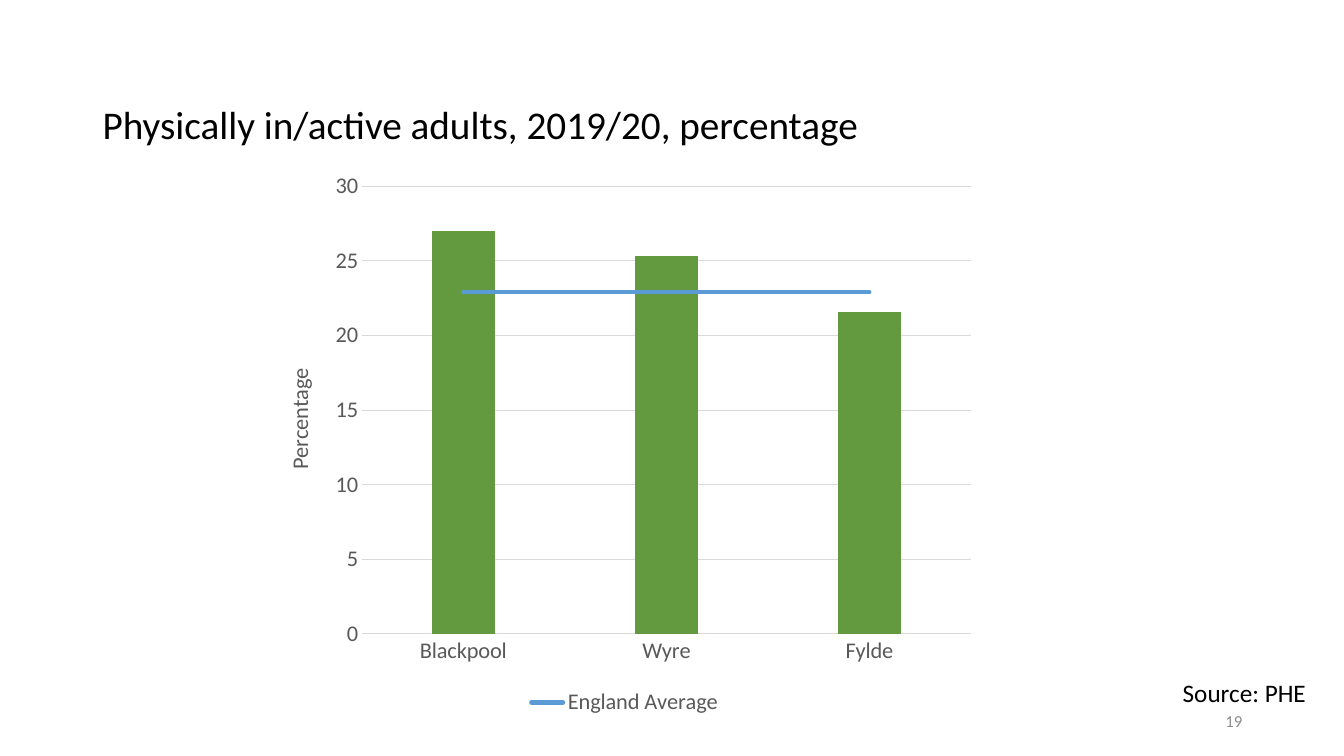
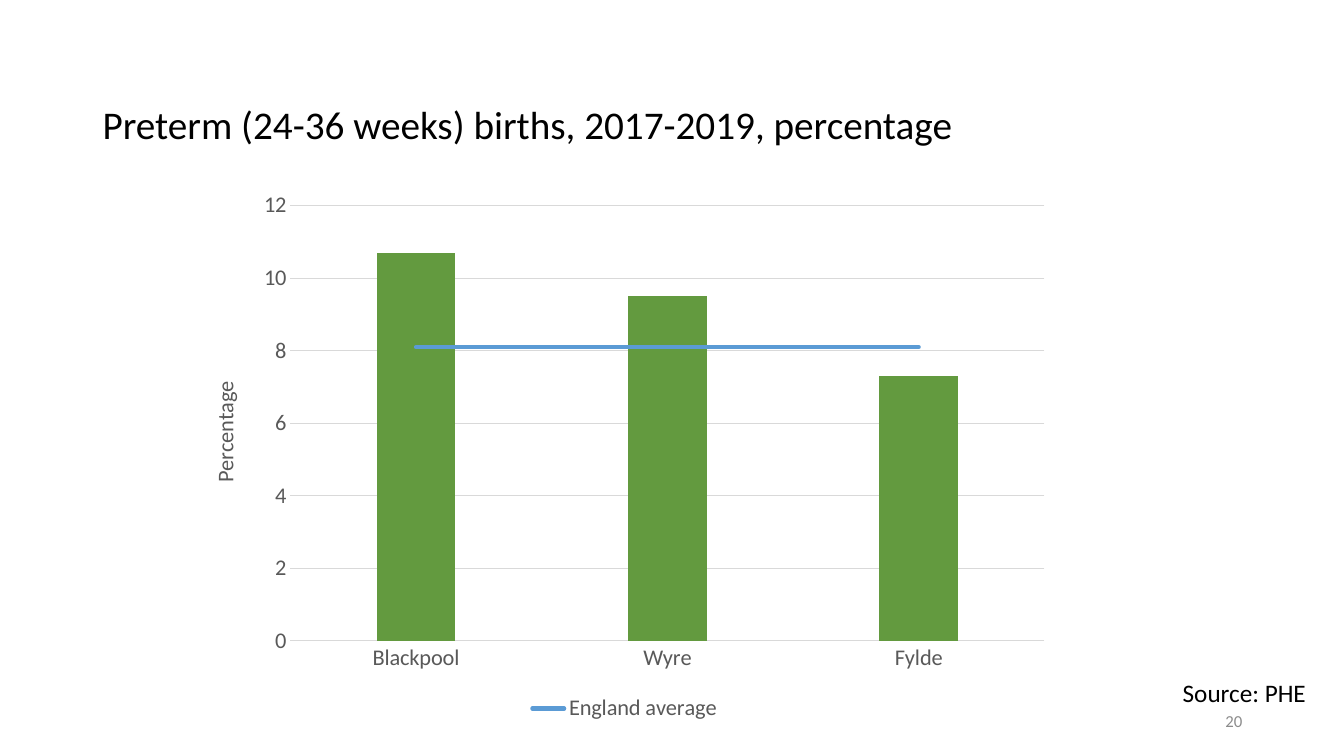
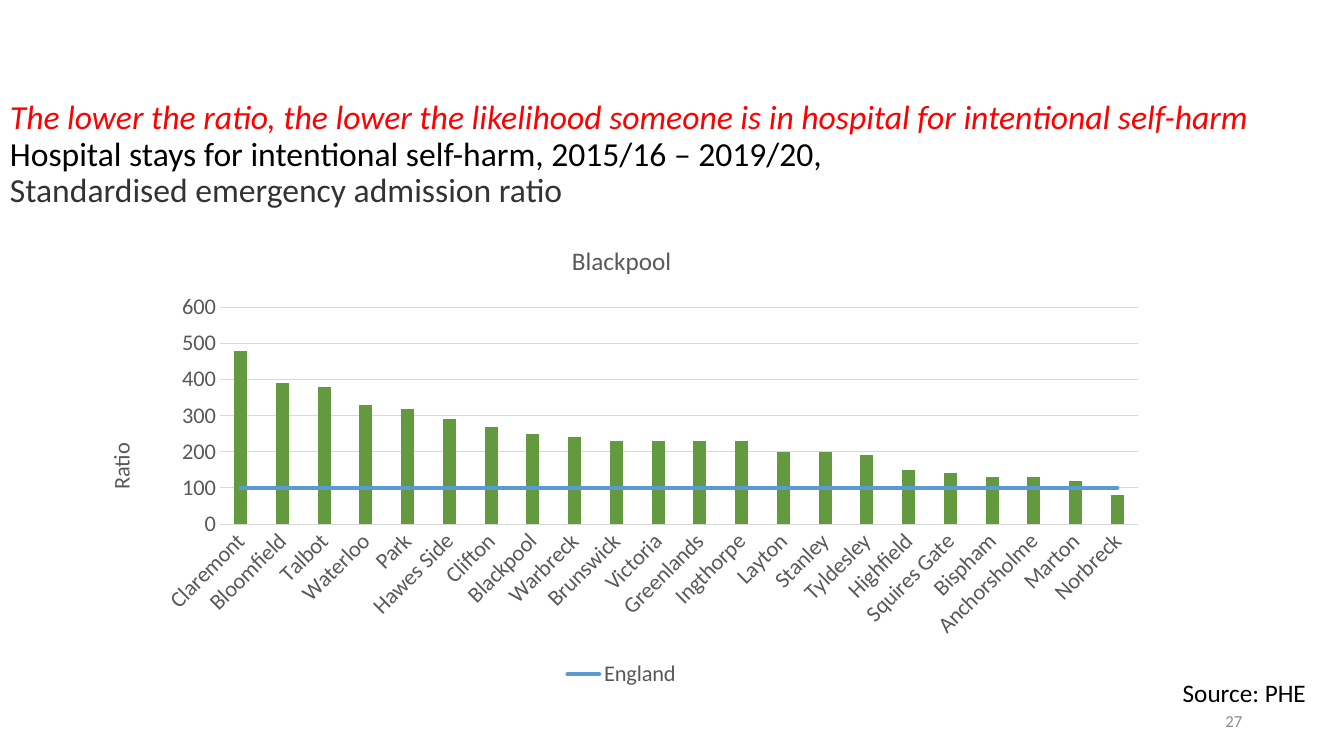
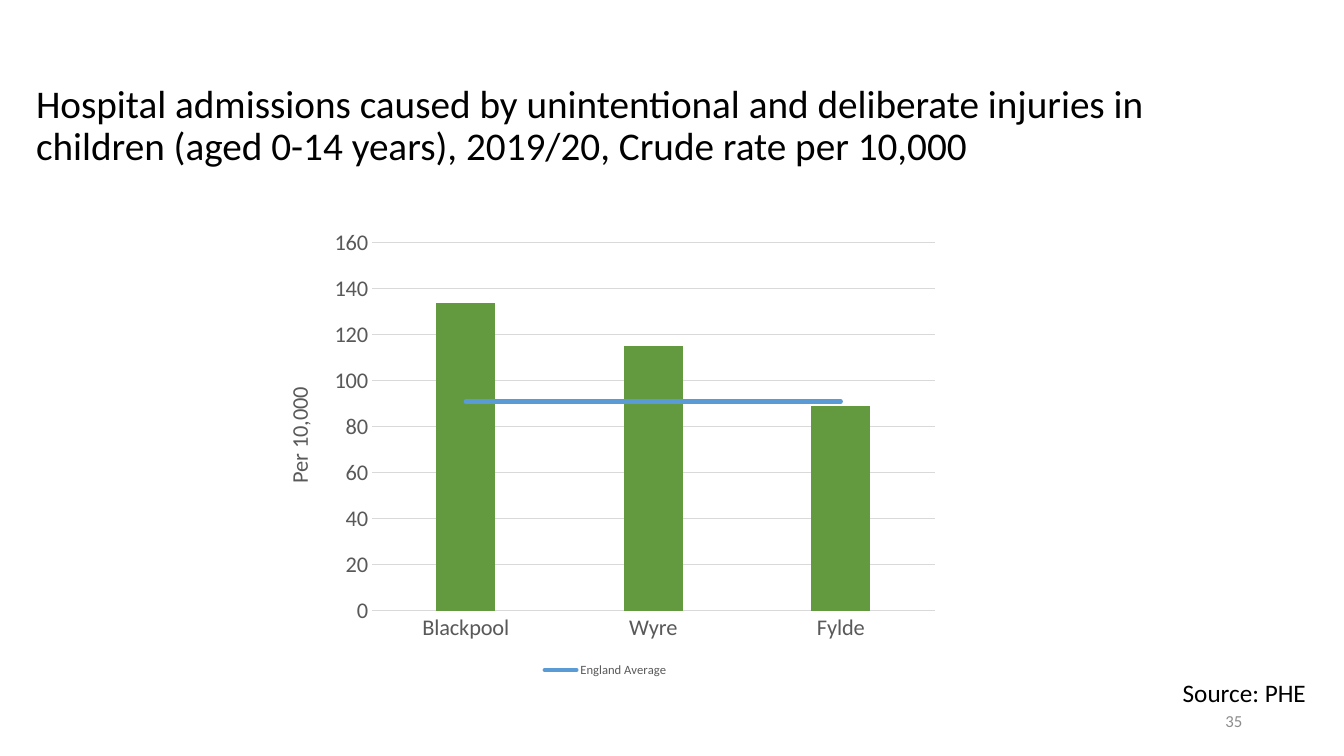
from dataclasses import dataclass

from pptx import Presentation
from pptx import util as u
from pptx.chart.chart import Chart
from pptx.chart.data import CategoryChartData
from pptx.dml.color import RGBColor
from pptx.enum import chart as charts
from pptx.enum import text
from pptx.oxml import parse_xml
from pptx.oxml.ns import nsdecls
from pptx.slide import Slide


@dataclass(frozen=True)
class Theme:
    font: str = "Calibri"
    black: str = "000000"
    red: str = "FF0000"
    charcoal: str = "333333"
    page_grey: str = "8C8C8C"
    label_grey: str = "595959"
    grid_grey: str = "D9D9D9"
    bar_green: str = "639A3F"
    average_blue: str = "5B9BD5"
    title_size: int = 28
    long_title_size: int = 24
    source_size: int = 18
    chart_title_size: int = 18
    label_size: int = 16
    page_size: int = 12
    small_legend_size: int = 9


THEME = Theme()


@dataclass(frozen=True)
class Area:
    """A rectangle in inches."""
    left: float
    top: float
    width: float
    height: float

    def lengths(self) -> tuple[u.Length, ...]:
        return tuple(u.Inches(n) for n in (self.left, self.top, self.width, self.height))


@dataclass(frozen=True)
class Line:
    words: str
    color: str = THEME.black
    size: int = THEME.title_size
    italic: bool = False


@dataclass(frozen=True)
class ChartPage:
    number: int
    title: tuple[Line, ...]
    title_area: Area
    chart_area: Area
    plot_area: Area
    axis_title: str
    values: dict[str, float]
    average_name: str
    average: float
    chart_title: str = ""
    legend_size: int = THEME.label_size
    label_angle: int = 0


TITLE_AREA = Area(0.92, 0.72, 11.5, 1.08)
NUMBER_AREA = Area(9.42, 6.95, 3, 0.4)
SOURCE_AREA = Area(11.16, 6.67, 1.89, 0.4)
DISTRICTS = ("Blackpool", "Wyre", "Fylde")
WARD_RATIOS = {
    "Claremont": 480, "Bloomfield": 390, "Talbot": 380, "Waterloo": 330,
    "Park": 320, "Hawes Side": 290, "Clifton": 270, "Blackpool": 250,
    "Warbreck": 240, "Brunswick": 230, "Victoria": 230, "Greenlands": 230,
    "Ingthorpe": 230, "Layton": 200, "Stanley": 200, "Tyldesley": 190,
    "Highfield": 150, "Squires Gate": 140, "Bispham": 130,
    "Anchorsholme": 130, "Marton": 120, "Norbreck": 80,
}

PAGES = (
    ChartPage(
        19, (Line("Physically in/active adults, 2019/20, percentage"),), TITLE_AREA,
        Area(2.61, 1.6, 7.17, 5.55), Area(3.59, 1.85, 6.04, 4.44),
        "Percentage", dict(zip(DISTRICTS, (27, 25.3, 21.6))), "England Average", 22.9,
    ),
    ChartPage(
        20, (Line("Preterm (24-36 weeks) births, 2017-2019, percentage"),), TITLE_AREA,
        Area(1.86, 1.8, 8.67, 5.41), Area(2.88, 2.04, 7.48, 4.32),
        "Percentage", dict(zip(DISTRICTS, (10.7, 9.5, 7.3))), "England average", 8.1,
    ),
    ChartPage(
        27,
        (
            Line("The lower the ratio, the lower the likelihood someone is in hospital "
                 "for intentional self-harm", THEME.red, THEME.long_title_size, True),
            Line("Hospital stays for intentional self-harm, 2015/16 – 2019/20,",
                 size=THEME.long_title_size),
            Line("Standardised emergency admission ratio", THEME.charcoal,
                 THEME.long_title_size),
        ),
        Area(0, 0.87, 12.77, 1.34),
        Area(0.83, 2.22, 10.67, 4.65), Area(2.18, 3.05, 9.11, 2.15),
        "Ratio", WARD_RATIOS, "England", 100,
        chart_title="Blackpool", label_angle=-45,
    ),
    ChartPage(
        35,
        (Line("Hospital admissions caused by unintentional and deliberate injuries in "
              "children (aged 0-14 years), 2019/20, Crude rate per 10,000"),),
        Area(0.26, 0.72, 12.16, 1.08),
        Area(2.6, 2.18, 6.81, 4.58), Area(3.69, 2.41, 5.58, 3.65),
        "Per 10,000", dict(zip(DISTRICTS, (134, 115, 89))), "England Average", 91,
        legend_size=THEME.small_legend_size,
    ),
)


def style_font(font, size: int, color: str, italic: bool = False) -> None:
    font.name = THEME.font
    font.size = u.Pt(size)
    font.bold = False
    font.italic = italic
    font.color.rgb = RGBColor.from_string(color)


def add_text(page: Slide, area: Area, lines: tuple[Line, ...],
             align=text.PP_ALIGN.LEFT, anchor=text.MSO_ANCHOR.MIDDLE,
             spacing: float = 1.0) -> None:
    """Add one paragraph whose lines are split by line breaks."""
    frame = page.shapes.add_textbox(*area.lengths()).text_frame
    frame.word_wrap = True
    frame.vertical_anchor = anchor
    para = frame.paragraphs[0]
    para.text = "\v".join(line.words for line in lines)
    para.alignment = align
    para.line_spacing = spacing
    for span, line in zip(para.runs, lines):
        style_font(span.font, line.size, line.color, line.italic)


def set_chart_text(frame, words: str, size: int) -> None:
    frame.text = words
    style_font(frame.paragraphs[0].runs[0].font, size, THEME.label_grey)


def turn_average_into_line(chart: Chart) -> None:
    """Move the second bar series to a line plot on the same axes."""
    bars = chart.element.xpath(".//c:barChart")[0]
    average = bars.xpath("c:ser")[1]
    for flag in average.xpath("c:invertIfNegative"):
        average.remove(flag)
    line_plot = parse_xml(
        f'<c:lineChart {nsdecls("c")}><c:grouping val="standard"/>'
        '<c:varyColors val="0"/><c:marker val="1"/></c:lineChart>')
    line_plot.insert(2, average)
    for axis in bars.xpath("c:axId"):
        line_plot.append(parse_xml(
            f'<c:axId {nsdecls("c")} val="{axis.get("val")}"/>'))
    bars.addnext(line_plot)

    series = chart.plots[1].series[0]
    series.smooth = False
    series.marker.style = charts.XL_MARKER_STYLE.NONE
    series.format.line.width = u.Pt(3)
    series.format.line.color.rgb = RGBColor.from_string(THEME.average_blue)
    line_plot.xpath(".//a:ln")[0].set("cap", "rnd")


def place_plot(chart: Chart, chart_area: Area, plot_area: Area) -> None:
    """Fix the inner plot rectangle as fractions of the chart."""
    fractions = {
        "x": (plot_area.left - chart_area.left) / chart_area.width,
        "y": (plot_area.top - chart_area.top) / chart_area.height,
        "w": plot_area.width / chart_area.width,
        "h": plot_area.height / chart_area.height,
    }
    sizes = "".join(f'<c:{key} val="{value:.4f}"/>' for key, value in fractions.items())
    plot = chart.element.xpath(".//c:plotArea")[0]
    for layout in plot.xpath("c:layout"):
        plot.remove(layout)
    plot.insert(0, parse_xml(
        f'<c:layout {nsdecls("c")}><c:manualLayout><c:layoutTarget val="inner"/>'
        f'<c:xMode val="edge"/><c:yMode val="edge"/>{sizes}</c:manualLayout></c:layout>'))


def style_axes(chart: Chart, data: ChartPage) -> None:
    grid_color = RGBColor.from_string(THEME.grid_grey)
    for axis in (chart.category_axis, chart.value_axis):
        axis.major_tick_mark = axis.minor_tick_mark = charts.XL_TICK_MARK.NONE
        style_font(axis.tick_labels.font, THEME.label_size, THEME.label_grey)
    values = chart.value_axis
    values.format.line.fill.background()
    values.tick_labels.number_format = "0"
    values.tick_labels.number_format_is_linked = False
    for line in (chart.category_axis.format.line, values.major_gridlines.format.line):
        line.width = u.Pt(0.75)
        line.color.rgb = grid_color
    set_chart_text(values.axis_title.text_frame, data.axis_title, THEME.label_size)
    chart.element.xpath(".//c:valAx/c:title//a:bodyPr")[0].set("rot", "-5400000")
    if data.label_angle:
        labels = chart.element.xpath(".//c:catAx/c:txPr/a:bodyPr")[0]
        labels.set("rot", str(data.label_angle * 60000))


def add_legend(chart: Chart, size: int) -> None:
    """Show a bottom legend that lists the average only."""
    chart.has_legend = True
    chart.legend.position = charts.XL_LEGEND_POSITION.BOTTOM
    chart.legend.include_in_layout = False
    style_font(chart.legend.font, size, THEME.label_grey)
    chart.element.xpath(".//c:legend")[0].insert(1, parse_xml(
        f'<c:legendEntry {nsdecls("c")}><c:idx val="0"/><c:delete val="1"/></c:legendEntry>'))


def add_average_chart(page: Slide, data: ChartPage) -> None:
    chart_data = CategoryChartData()
    chart_data.categories = list(data.values)
    chart_data.add_series("Series 1", list(data.values.values()))
    chart_data.add_series(data.average_name, [data.average] * len(data.values))
    chart = page.shapes.add_chart(
        charts.XL_CHART_TYPE.COLUMN_CLUSTERED, *data.chart_area.lengths(), chart_data).chart
    style_font(chart.font, THEME.label_size, THEME.label_grey)
    chart.has_title = bool(data.chart_title)
    if data.chart_title:
        set_chart_text(chart.chart_title.text_frame, data.chart_title, THEME.chart_title_size)

    bars = chart.plots[0]
    bars.gap_width = 219
    bars.overlap = -27
    bars.vary_by_categories = False
    fill = bars.series[0].format.fill
    fill.solid()
    fill.fore_color.rgb = RGBColor.from_string(THEME.bar_green)
    turn_average_into_line(chart)
    style_axes(chart, data)
    add_legend(chart, data.legend_size)
    place_plot(chart, data.chart_area, data.plot_area)


def main() -> None:
    deck = Presentation()
    deck.slide_width, deck.slide_height = u.Inches(13.33), u.Inches(7.5)
    right = text.PP_ALIGN.RIGHT
    for data in PAGES:
        page = deck.slides.add_slide(deck.slide_layouts[6])
        add_text(page, data.title_area, data.title, spacing=0.9)
        add_text(page, NUMBER_AREA,
                 (Line(str(data.number), THEME.page_grey, THEME.page_size),), right)
        add_text(page, SOURCE_AREA, (Line("Source: PHE", size=THEME.source_size),),
                 right, text.MSO_ANCHOR.TOP)
        add_average_chart(page, data)
    deck.save("out.pptx")


if __name__ == "__main__":
    main()
